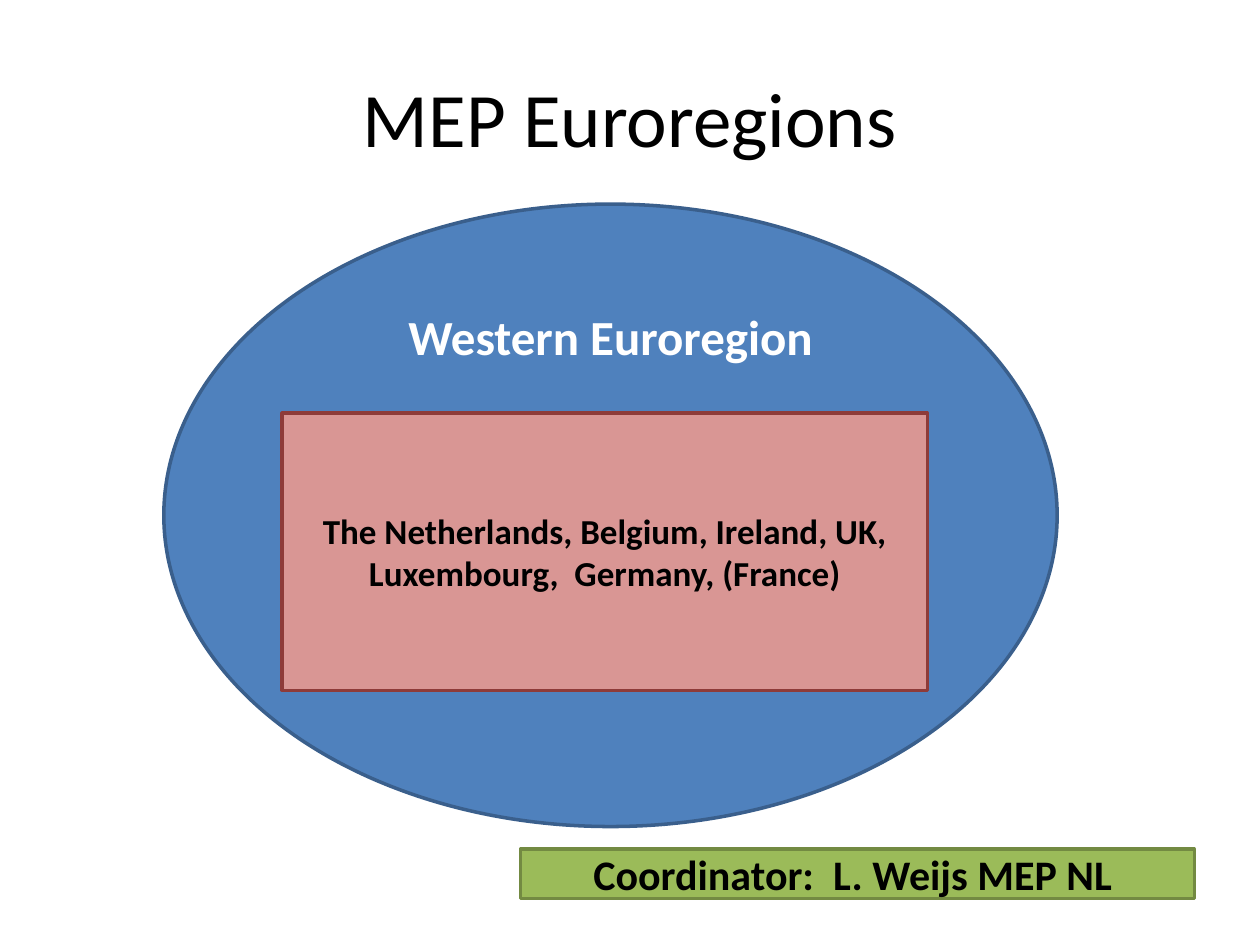
from pptx import Presentation
from pptx.dml.color import RGBColor
from pptx.enum.shapes import MSO_SHAPE
from pptx.enum.text import MSO_ANCHOR, PP_ALIGN
from pptx.util import Inches, Pt

ELLIPSE = MSO_SHAPE.OVAL
RECTANGLE = MSO_SHAPE.RECTANGLE
TOP = MSO_ANCHOR.TOP
MIDDLE = MSO_ANCHOR.MIDDLE
CENTER = PP_ALIGN.CENTER

BLACK = RGBColor(0x00, 0x00, 0x00)
WHITE = RGBColor(0xFF, 0xFF, 0xFF)
BLUE = RGBColor(0x4F, 0x81, 0xBD)
DARK_BLUE = RGBColor(0x3A, 0x5F, 0x8C)
PINK = RGBColor(0xD9, 0x96, 0x94)
DARK_RED = RGBColor(0x8E, 0x3B, 0x39)
GREEN = RGBColor(0x9B, 0xBB, 0x59)
DARK_GREEN = RGBColor(0x73, 0x8A, 0x42)


def write_text(box, text, font="Calibri", size=20, color=BLACK, bold=False,
               anchor=MIDDLE, top_margin=0.05):
    frame = box.text_frame
    frame.word_wrap = True
    frame.vertical_anchor = anchor
    frame.margin_top = Inches(top_margin)
    para = frame.paragraphs[0]
    para.alignment = CENTER
    span = para.add_run()
    span.text = text
    span.font.name = font
    span.font.size = Pt(size)
    span.font.bold = bold
    span.font.color.rgb = color


class SlideBuilder:
    """Holds the shared style and the current slide."""

    line_width = Pt(2)

    def __init__(self, page):
        self.page = page

    def title(self, text, left, top, width, height):
        box = self.page.shapes.add_textbox(
            Inches(left), Inches(top), Inches(width), Inches(height))
        write_text(box, text, size=44)

    def shape(self, kind, text, left, top, width, height, fill, line, **text_format):
        box = self.page.shapes.add_shape(
            kind, Inches(left), Inches(top), Inches(width), Inches(height))
        box.shadow.inherit = False
        box.fill.solid()
        box.fill.fore_color.rgb = fill
        box.line.color.rgb = line
        box.line.width = self.line_width
        write_text(box, text, bold=True, **text_format)


def main():
    deck = Presentation()
    deck.slide_width = Inches(10)
    deck.slide_height = Inches(7.5)
    builder = SlideBuilder(deck.slides.add_slide(deck.slide_layouts[6]))

    # Title
    builder.title("MEP Euroregions", 0.5, 0.3, 9, 1.25)

    # Region with its member countries
    builder.shape(ELLIPSE, "Western Euroregion", 1.3, 1.62, 7.09, 4.94,
                  BLUE, DARK_BLUE, size=28, color=WHITE, anchor=TOP, top_margin=0.09)
    builder.shape(RECTANGLE,
                  "The Netherlands, Belgium, Ireland, UK, Luxembourg,  Germany, (France)",
                  2.24, 3.28, 5.12, 2.2, PINK, DARK_RED)

    # Coordinator
    builder.shape(RECTANGLE, "Coordinator:  L. Weijs MEP NL ", 4.13, 6.74, 5.35, 0.39,
                  GREEN, DARK_GREEN, size=24)

    deck.save("out.pptx")


if __name__ == "__main__":
    main()
